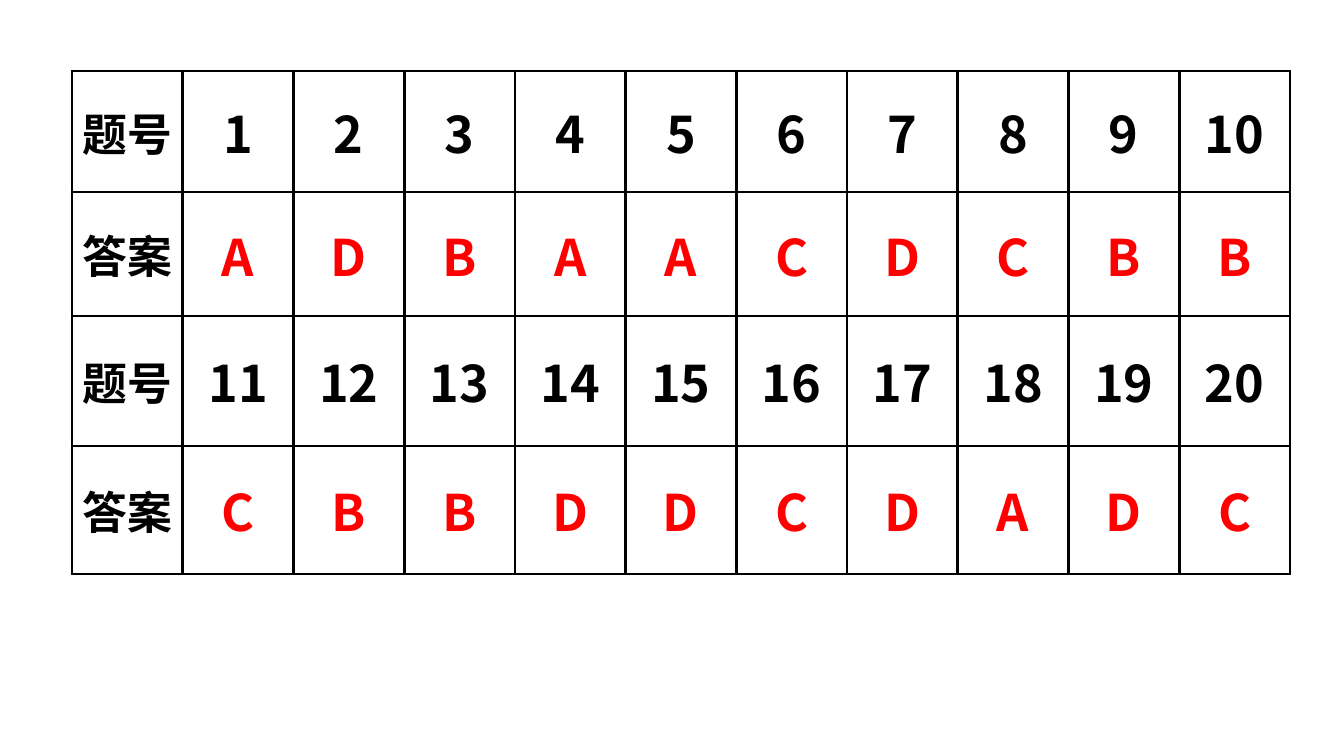
from dataclasses import dataclass

from lxml.etree import SubElement
from pptx import Presentation
from pptx.dml.color import RGBColor
from pptx.enum.text import MSO_ANCHOR, PP_ALIGN
from pptx.oxml.ns import qn
from pptx.util import Emu, Pt

EMU_PER_PX = 914400 / 100.8


@dataclass(frozen=True)
class Theme:
    font: str = "Noto Sans CJK SC"
    ink: str = "000000"
    answer: str = "FF0000"
    label_size: int = 32
    value_size: int = 36
    border_width: float = 2.25


THEME = Theme()
ROW_HEIGHTS = [121, 124, 130, 128]
ANSWERS = ["ADBAACDCBB", "CBBDDCDADC"]


def px(length):
    return Emu(round(length * EMU_PER_PX))


def set_borders(cell):
    properties = cell._tc.get_or_add_tcPr()
    for side in ("a:lnL", "a:lnR", "a:lnT", "a:lnB"):
        line = SubElement(properties, qn(side), w=str(Pt(THEME.border_width)))
        fill = SubElement(line, qn("a:solidFill"))
        SubElement(fill, qn("a:srgbClr"), val=THEME.ink)


def add_run(paragraph, text, size, color):
    run = paragraph.add_run()
    run.text = text
    run.font.name = THEME.font
    run.font.size = Pt(size)
    run.font.bold = True
    run.font.color.rgb = RGBColor.from_string(color)
    SubElement(run.font._element, qn("a:ea"), typeface=THEME.font)


def fill_cell(cell, text, size, color):
    set_borders(cell)
    cell.fill.background()
    cell.vertical_anchor = MSO_ANCHOR.MIDDLE
    cell.margin_left = cell.margin_right = px(7)
    cell.margin_top = cell.margin_bottom = 0
    paragraph = cell.text_frame.paragraphs[0]
    paragraph.alignment = PP_ALIGN.CENTER
    add_run(paragraph, text, size, color)


def answer_rows():
    """Return (label, values, value color) for each row, numbering on from block to block."""
    rows = []
    first = 1
    for answers in ANSWERS:
        numbers = [str(first + offset) for offset in range(len(answers))]
        rows.append(("题号", numbers, THEME.ink))
        rows.append(("答案", answers, THEME.answer))
        first += len(answers)
    return rows


def add_answer_table(slide, left, top, width):
    rows = answer_rows()
    column_count = 1 + len(ANSWERS[0])
    frame = slide.shapes.add_table(
        len(rows), column_count, px(left), px(top), px(width), px(sum(ROW_HEIGHTS))
    )
    table = frame.table
    table.first_row = table.horz_banding = False
    for column in table.columns:
        column.width = px(width / column_count)
    for row, height, (label, values, color) in zip(table.rows, ROW_HEIGHTS, rows):
        row.height = px(height)
        label_cell, *value_cells = row.cells
        fill_cell(label_cell, label, THEME.label_size, THEME.ink)
        for cell, value in zip(value_cells, values):
            fill_cell(cell, value, THEME.value_size, color)


def main():
    presentation = Presentation()
    presentation.slide_width = px(1344)
    presentation.slide_height = px(756)
    slide = presentation.slides.add_slide(presentation.slide_layouts[6])
    add_answer_table(slide, 72, 71, 1218)
    presentation.save("out.pptx")


if __name__ == "__main__":
    main()
